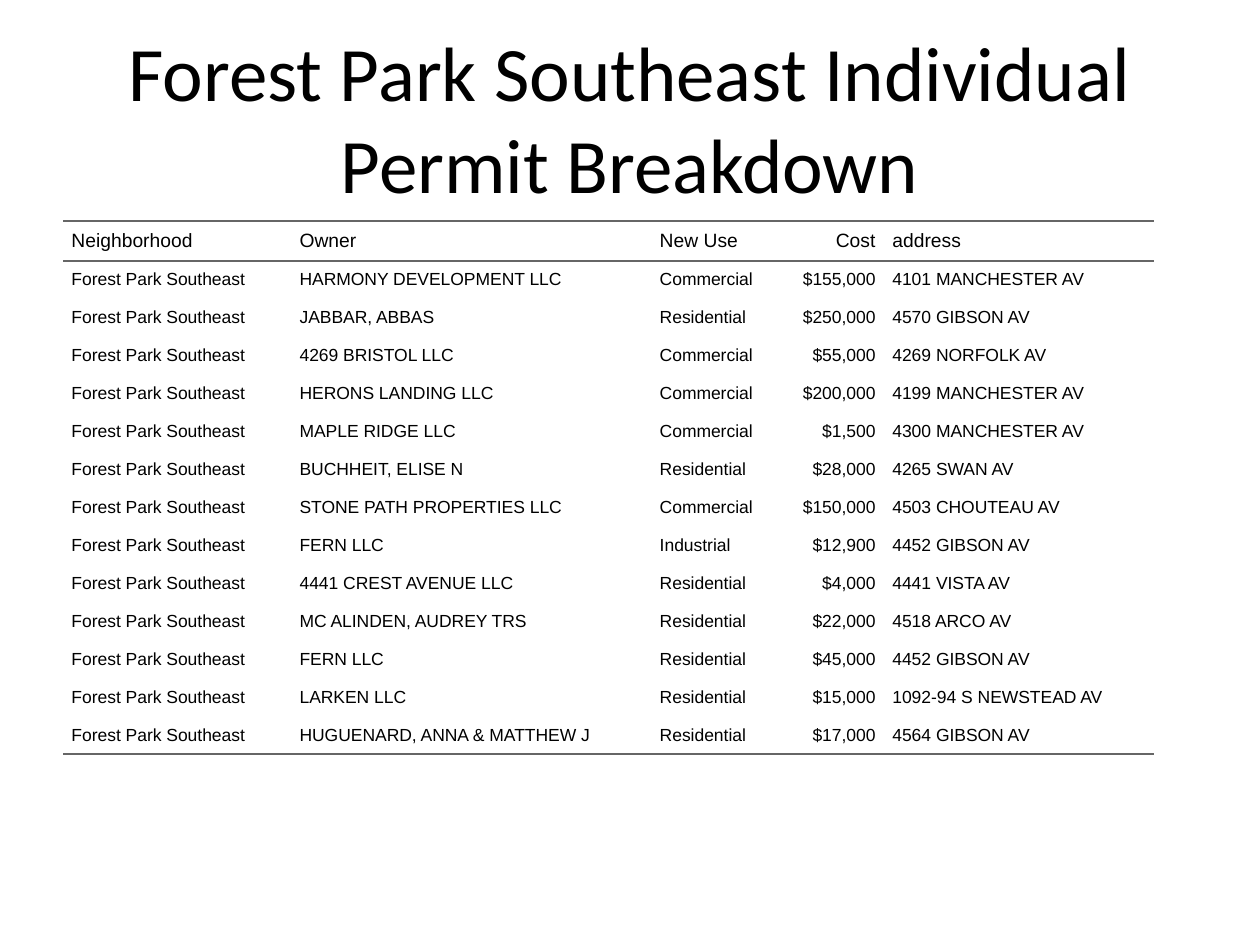
import pptx
import pptx.dml.color
import pptx.enum.text
import pptx.oxml
import pptx.oxml.ns
import pptx.util

Cm = pptx.util.Cm
Pt = pptx.util.Pt
ALIGN = pptx.enum.text.PP_ALIGN
MIDDLE = pptx.enum.text.MSO_ANCHOR.MIDDLE

BLACK = pptx.dml.color.RGBColor(0x00, 0x00, 0x00)
RULE_GRAY = pptx.dml.color.RGBColor(0x66, 0x66, 0x66)

NO_STYLE_ID = "{2D5ABB26-0587-4C30-8999-92F81FD0307C}"
CELL_PADDING = Cm(0.17)
ROW_HEIGHT = Cm(0.64)
COST_COLUMN = 3
COLUMN_WIDTHS = [Cm(4.6), Cm(7.26), Cm(2.79), Cm(1.9), Cm(5.44)]

TITLE = "Forest Park Southeast Individual Permit Breakdown"
NEIGHBORHOOD = "Forest Park Southeast"
HEADER = ("Neighborhood", "Owner", "New Use", "Cost", "address")
PERMITS = [
    ("HARMONY DEVELOPMENT LLC", "Commercial", 155000, "4101 MANCHESTER AV"),
    ("JABBAR, ABBAS", "Residential", 250000, "4570 GIBSON AV"),
    ("4269 BRISTOL LLC", "Commercial", 55000, "4269 NORFOLK AV"),
    ("HERONS LANDING LLC", "Commercial", 200000, "4199 MANCHESTER AV"),
    ("MAPLE RIDGE LLC", "Commercial", 1500, "4300 MANCHESTER AV"),
    ("BUCHHEIT, ELISE N", "Residential", 28000, "4265 SWAN AV"),
    ("STONE PATH PROPERTIES LLC", "Commercial", 150000, "4503 CHOUTEAU AV"),
    ("FERN LLC", "Industrial", 12900, "4452 GIBSON AV"),
    ("4441 CREST AVENUE LLC", "Residential", 4000, "4441 VISTA AV"),
    ("MC ALINDEN, AUDREY TRS", "Residential", 22000, "4518 ARCO AV"),
    ("FERN LLC", "Residential", 45000, "4452 GIBSON AV"),
    ("LARKEN LLC", "Residential", 15000, "1092-94 S NEWSTEAD AV"),
    ("HUGUENARD, ANNA & MATTHEW J", "Residential", 17000, "4564 GIBSON AV"),
]


def set_attributes(target, values):
    for name, value in values.items():
        setattr(target, name, value)


def write_text(paragraph, text, font_name, size, alignment):
    paragraph.alignment = alignment
    run = paragraph.add_run()
    run.text = text
    set_attributes(run.font, {"name": font_name, "size": Pt(size)})
    run.font.color.rgb = BLACK


def add_title(slide):
    text_box = slide.shapes.add_textbox(Cm(1.27), Cm(0.76), Cm(22.86), Cm(3.18))
    frame = text_box.text_frame
    set_attributes(frame, {"word_wrap": True, "vertical_anchor": MIDDLE})
    write_text(frame.paragraphs[0], TITLE, "Calibri", 44, ALIGN.CENTER)


def add_border(cell, side):
    """Draw a gray rule on one side of a cell: T for top, B for bottom."""
    border = pptx.oxml.parse_xml(
        f'<a:ln{side} {pptx.oxml.ns.nsdecls("a")} w="{Pt(1.5)}">'
        f'<a:solidFill><a:srgbClr val="{RULE_GRAY}"/></a:solidFill>'
        f'</a:ln{side}>'
    )
    cell._tc.get_or_add_tcPr().append(border)


def fill_cell(cell, text, size, alignment, border_sides):
    set_attributes(cell, {
        "margin_left": 0,
        "margin_right": 0,
        "margin_top": CELL_PADDING,
        "margin_bottom": CELL_PADDING,
        "vertical_anchor": MIDDLE,
    })
    for side in border_sides:
        add_border(cell, side)
    cell.fill.background()

    paragraph = cell.text_frame.paragraphs[0]
    set_attributes(paragraph, {"space_before": Pt(5), "space_after": Pt(5)})
    properties = paragraph._p.get_or_add_pPr()
    for margin in ("marL", "marR"):
        properties.set(margin, str(CELL_PADDING))
    properties.set("indent", "0")
    write_text(paragraph, text, "Arial", size, alignment)


def add_permit_table(slide):
    rows = [HEADER] + [
        (NEIGHBORHOOD, owner, use, f"${cost:,}", address)
        for owner, use, cost, address in PERMITS
    ]
    table = slide.shapes.add_table(
        len(rows), len(HEADER), Cm(1.27), Cm(4.45),
        sum(COLUMN_WIDTHS), ROW_HEIGHT * len(rows),
    ).table
    set_attributes(table, {"first_row": False, "horz_banding": False})
    table._tbl.tblPr.find(pptx.oxml.ns.qn("a:tableStyleId")).text = NO_STYLE_ID
    for column, width in zip(table.columns, COLUMN_WIDTHS):
        column.width = width

    border_sides = {0: "TB", len(rows) - 1: "B"}
    for row_index, values in enumerate(rows):
        size = 11 if row_index == 0 else 10
        for column_index, text in enumerate(values):
            alignment = ALIGN.RIGHT if column_index == COST_COLUMN else ALIGN.LEFT
            fill_cell(table.cell(row_index, column_index), text, size,
                      alignment, border_sides.get(row_index, ""))


def main():
    presentation = pptx.Presentation()
    set_attributes(presentation, {"slide_width": Cm(25.4), "slide_height": Cm(19.05)})
    slide = presentation.slides.add_slide(presentation.slide_layouts[6])
    add_title(slide)
    add_permit_table(slide)
    presentation.save("out.pptx")


if __name__ == "__main__":
    main()
